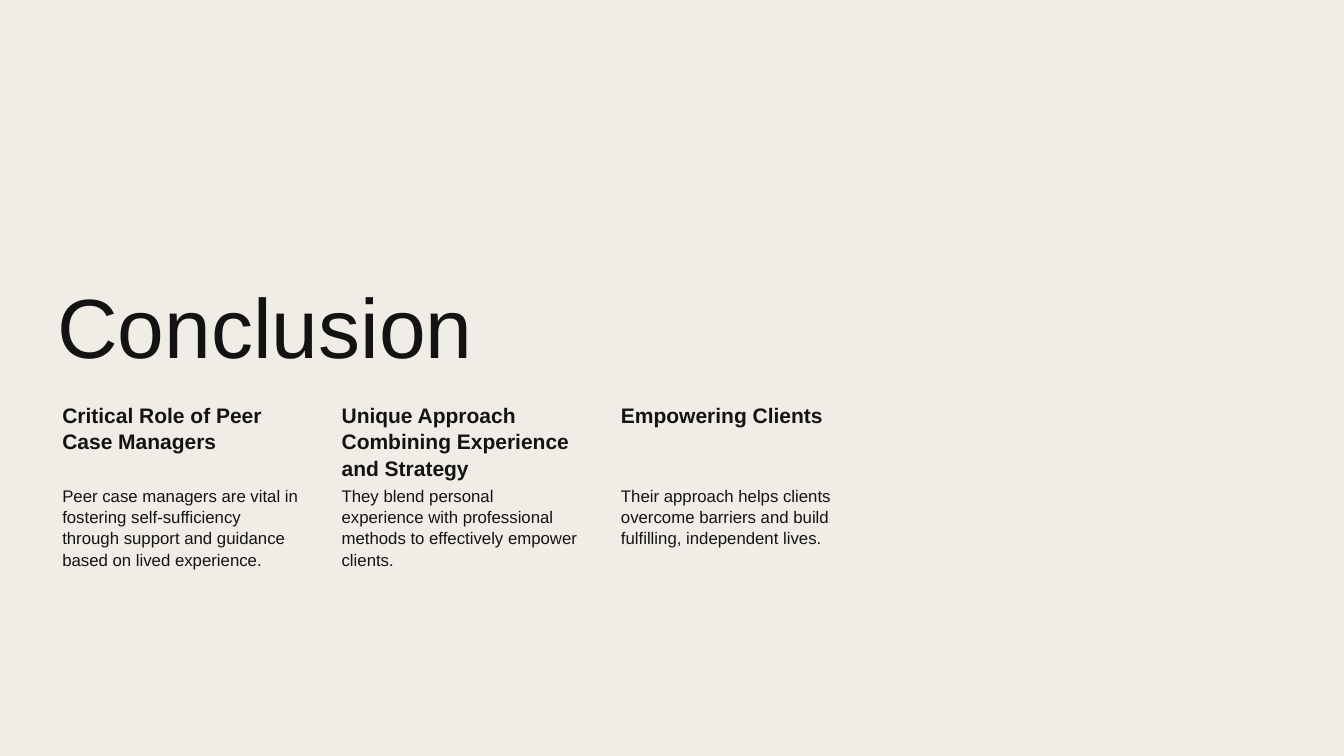
from dataclasses import dataclass

from pptx import Presentation
from pptx.dml.color import RGBColor
from pptx.enum.text import MSO_ANCHOR
from pptx.slide import Slide
from pptx.util import Cm, Pt

TOP, BOTTOM = MSO_ANCHOR.TOP, MSO_ANCHOR.BOTTOM
CREAM = RGBColor(0xF0, 0xED, 0xE6)
INK = RGBColor(0x13, 0x13, 0x13)
FONT = "Arial"

LEFT = 1.19
COLUMN_WIDTH = 6.42
COLUMN_STEP = 7.04
TITLE_INSETS = (0.25, 0.13, 0.25, 0.13)
COLUMN_INSETS = (0.38, 0.05, 0.05, 0.05)


@dataclass(frozen=True)
class Takeaway:
    heading: str
    body: str


TAKEAWAYS = [
    Takeaway(
        "Critical Role of Peer Case Managers",
        "Peer case managers are vital in fostering self-sufficiency through "
        "support and guidance based on lived experience.",
    ),
    Takeaway(
        "Unique Approach Combining Experience and Strategy",
        "They blend personal experience with professional methods to "
        "effectively empower clients.",
    ),
    Takeaway(
        "Empowering Clients",
        "Their approach helps clients overcome barriers and build "
        "fulfilling, independent lives.",
    ),
]


def add_text(
    s: Slide,
    text: str,
    *,
    left: float,
    top: float,
    width: float,
    height: float,
    size: float,
    bold: bool = False,
    anchor: MSO_ANCHOR = TOP,
    line_spacing: float = 1.05,
    insets: tuple[float, float, float, float] = COLUMN_INSETS,
) -> None:
    """Add a text box; lengths in cm, insets as left, top, right, bottom."""
    sp = s.shapes.add_textbox(Cm(left), Cm(top), Cm(width), Cm(height))
    tf = sp.text_frame
    tf.word_wrap = True
    tf.vertical_anchor = anchor
    tf.margin_left, tf.margin_top, tf.margin_right, tf.margin_bottom = map(Cm, insets)
    p = tf.paragraphs[0]
    p.line_spacing = line_spacing
    r = p.add_run()
    r.text = text
    r.font.name = FONT
    r.font.size = Pt(size)
    r.font.bold = bold
    r.font.color.rgb = INK


def add_takeaway(s: Slide, takeaway: Takeaway, left: float) -> None:
    add_text(s, takeaway.heading, left=left, top=10.06, width=COLUMN_WIDTH,
             height=2.11, size=15, bold=True)
    add_text(s, takeaway.body, left=left, top=12.17, width=COLUMN_WIDTH,
             height=3.63, size=12)


def main() -> None:
    prs = Presentation()
    prs.slide_width, prs.slide_height = Cm(33.87), Cm(19.05)
    s = prs.slides.add_slide(prs.slide_layouts[6])
    s.background.fill.solid()
    s.background.fill.fore_color.rgb = CREAM

    add_text(s, "Conclusion", left=LEFT, top=4.52, width=20.47, height=5.11,
             size=60, anchor=BOTTOM, line_spacing=0.9, insets=TITLE_INSETS)
    for i, takeaway in enumerate(TAKEAWAYS):
        add_takeaway(s, takeaway, LEFT + i * COLUMN_STEP)

    prs.save("out.pptx")


if __name__ == "__main__":
    main()
